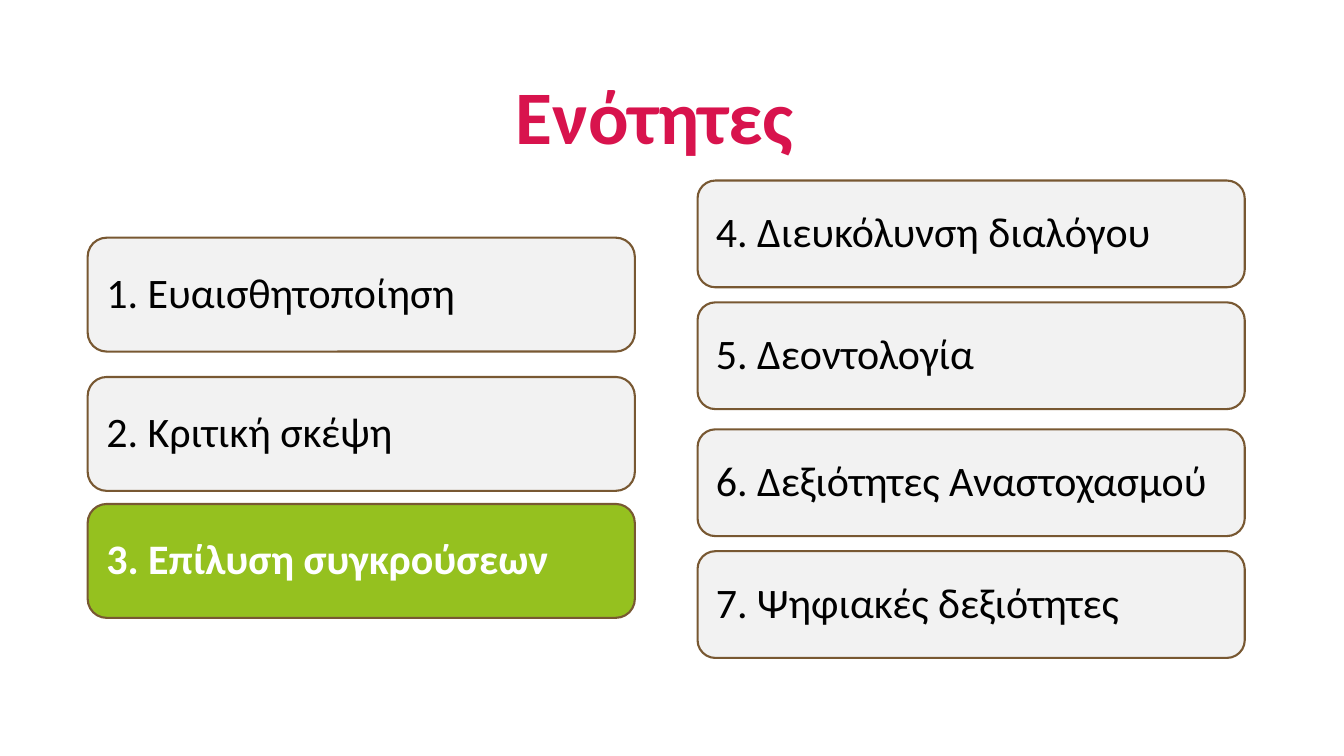
from pptx import Presentation
from pptx.dml.color import RGBColor
from pptx.enum.shapes import MSO_SHAPE
from pptx.enum.text import MSO_ANCHOR, PP_ALIGN
from pptx.util import Cm, Pt

ROUNDED = MSO_SHAPE.ROUNDED_RECTANGLE
MIDDLE, BOTTOM = MSO_ANCHOR.MIDDLE, MSO_ANCHOR.BOTTOM
LEFT, CENTER = PP_ALIGN.LEFT, PP_ALIGN.CENTER

CRIMSON = RGBColor(0xD8, 0x13, 0x4D)
GREY = RGBColor(0xF2, 0xF2, 0xF2)
GREEN = RGBColor(0x95, 0xC1, 0x1F)
BROWN = RGBColor(0x78, 0x58, 0x32)
BLACK = RGBColor(0, 0, 0)
WHITE = RGBColor(0xFF, 0xFF, 0xFF)

CURRENT = "3. Επίλυση συγκρούσεων"
BOX_WIDTH = 13.79
INSET = Cm(0.33)

# Each column: left, box height, then (top, label) pairs, in cm
COLUMNS = [
    (2.21, 2.87, [(5.99, "1. Ευαισθητοποίηση"),
                  (9.5, "2. Κριτική σκέψη"),
                  (12.7, CURRENT)]),
    (17.58, 2.69, [(4.55, "4. Διευκόλυνση διαλόγου"),
                   (7.62, "5. Δεοντολογία"),
                   (10.82, "6. Δεξιότητες Αναστοχασμού"),
                   (13.89, "7. Ψηφιακές δεξιότητες")]),
]


def add_text(tf, text, size, color, bold, align, anchor):
    tf.word_wrap = True
    tf.vertical_anchor = anchor
    p = tf.paragraphs[0]
    p.alignment = align
    p.line_spacing = 0.9
    r = p.add_run()
    r.text = text
    r.font.name = "Calibri"
    r.font.size = Pt(size)
    r.font.bold = bold
    r.font.color.rgb = color


prs = Presentation()
prs.slide_width, prs.slide_height = Cm(33.87), Cm(19.05)
s = prs.slides.add_slide(prs.slide_layouts[5])

# Title
title = s.shapes.title
title.left, title.top = Cm(0.03), Cm(-0.76)
title.width, title.height = Cm(32.94), Cm(4.95)
add_text(title.text_frame, "Ενότητες", 54, CRIMSON, True, CENTER, BOTTOM)

# Unit boxes, with the current unit highlighted
for left, height, units in COLUMNS:
    for top, label in units:
        current = label == CURRENT
        sp = s.shapes.add_shape(ROUNDED, Cm(left), Cm(top), Cm(BOX_WIDTH), Cm(height))
        sp.shadow.inherit = False
        sp.fill.solid()
        sp.fill.fore_color.rgb = GREEN if current else GREY
        sp.line.color.rgb = BROWN
        sp.line.width = Pt(1.5)
        tf = sp.text_frame
        tf.margin_left = tf.margin_right = tf.margin_top = tf.margin_bottom = INSET
        add_text(tf, label, 30, WHITE if current else BLACK, current, LEFT, MIDDLE)

prs.save("out.pptx")
